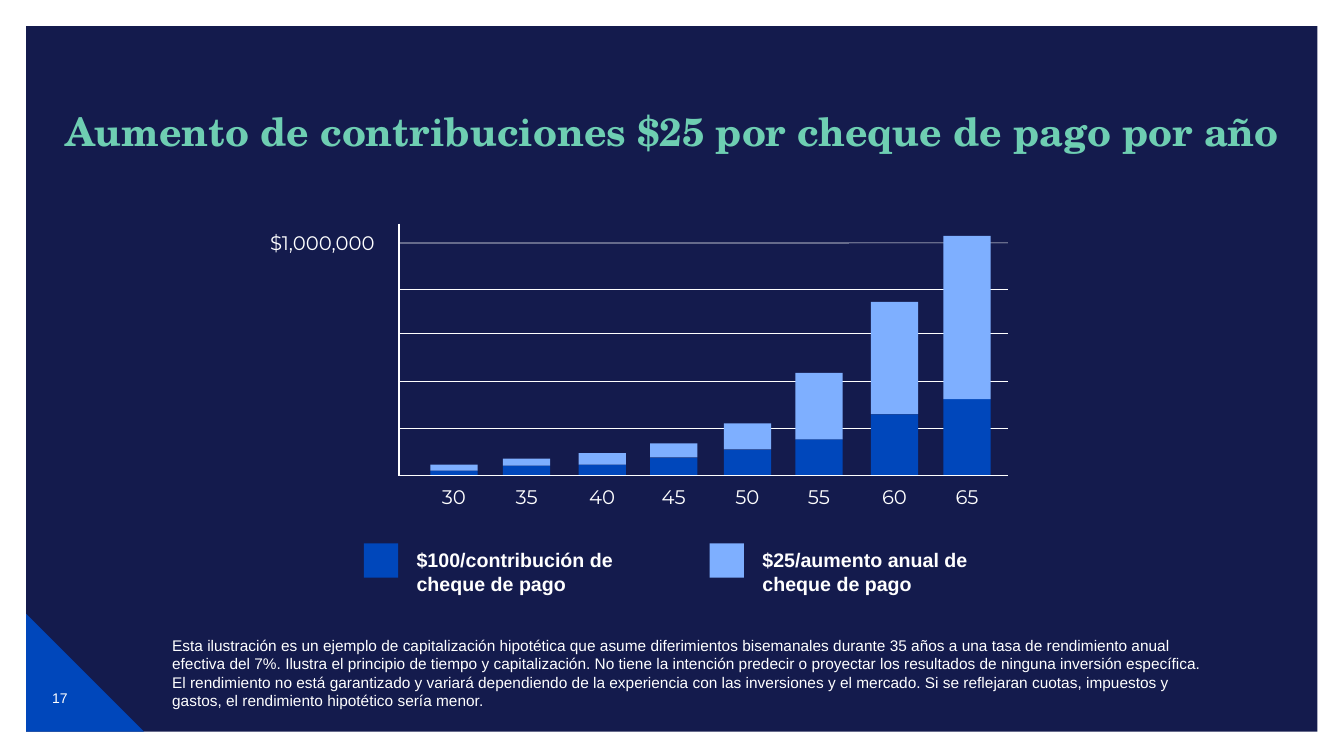
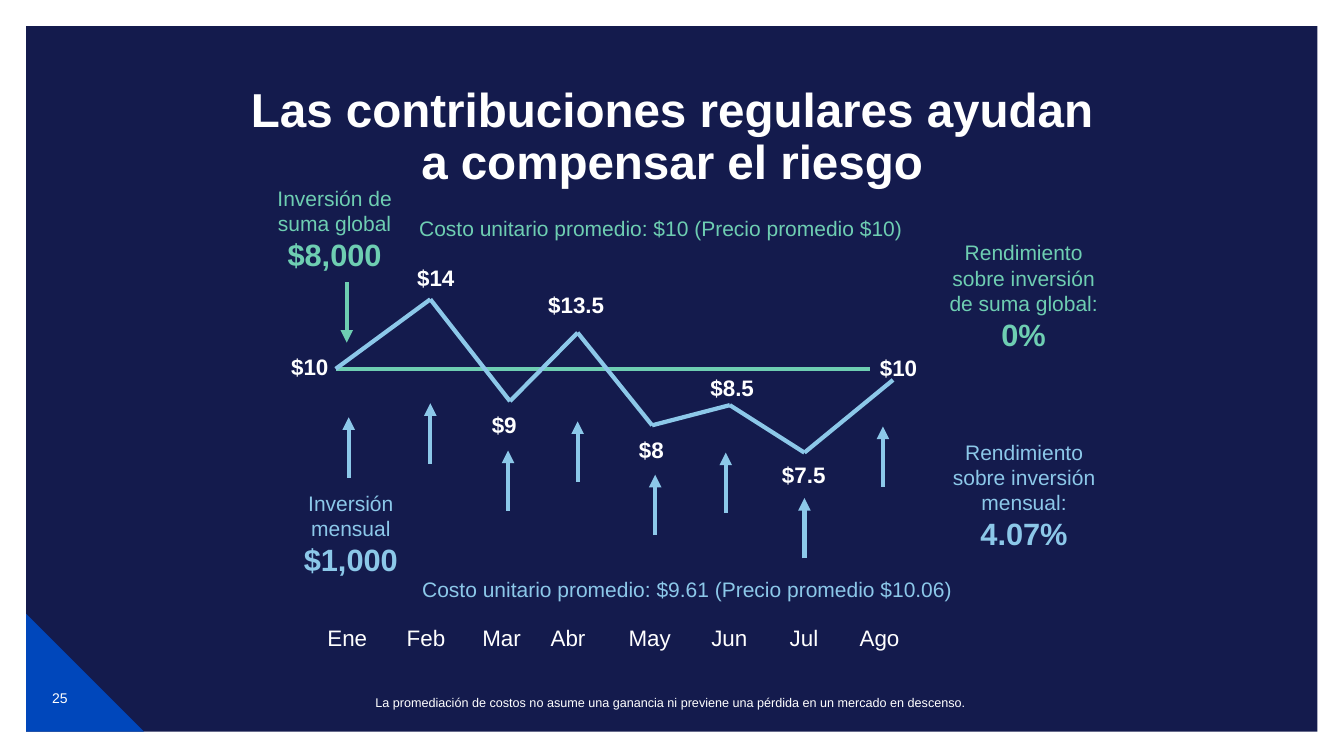
"""Build two slides on retirement saving: yearly raises and regular deposits."""
from dataclasses import dataclass
from itertools import pairwise

from lxml import etree
from pptx import Presentation, shapes as kinds, slide as deck, util as u
from pptx.dml import color
from pptx.enum import shapes, text
from pptx.oxml import ns

Rgb = color.RGBColor
Spot = tuple[float, float]
Area = tuple[float, float, float, float]
MID = text.PP_ALIGN.CENTER
LEFT = text.PP_ALIGN.LEFT


@dataclass(frozen=True)
class Theme:
    navy: Rgb = Rgb.from_string("141B4D")
    blue: Rgb = Rgb.from_string("0047BB")
    light: Rgb = Rgb.from_string("7EAFFF")
    sky: Rgb = Rgb.from_string("8CC8E9")
    mint: Rgb = Rgb.from_string("6ECEB2")
    white: Rgb = Rgb.from_string("FFFFFF")
    sans: str = "Arial"
    serif: str = "TeX Gyre Schola"
    round: str = "Montserrat"
    head: float = 34
    title: float = 28
    sum: float = 22
    label: float = 16
    body: float = 15
    key: float = 14
    small: float = 11
    page: float = 10
    note: float = 9


T = Theme()


@dataclass(frozen=True)
class Run:
    words: str
    size: float
    tint: Rgb = T.white
    bold: bool = False
    face: str = T.sans


@dataclass(frozen=True)
class Bar:
    age: str
    left: float
    base: float
    rise: float


@dataclass(frozen=True)
class Month:
    name: str
    left: float
    dot: Spot
    tip: Spot
    price: str
    tag: Spot


@dataclass(frozen=True)
class Fact:
    area: Area
    words: str
    sum: str
    tint: Rgb


BARS = (
    Bar("30", 307.4, 3.6, 4.3),
    Bar("35", 359.3, 7.2, 5),
    Bar("40", 413.3, 7.9, 8.3),
    Bar("45", 464.4, 13, 10.1),
    Bar("50", 517, 18.7, 18.7),
    Bar("55", 568.1, 25.9, 47.5),
    Bar("60", 622.1, 43.9, 80.3),
    Bar("65", 673.9, 54.7, 116.6),
)
MONTHS = (
    Month("Ene", 223.2, (239.8, 263.5), (249.1, 298.1), "$10", (200.9, 248.4)),
    Month("Feb", 279.4, (307.4, 213.8), (307.4, 288), "$14", (290.9, 185)),
    Month("Mar", 333.4, (364.3, 286.6), (362.9, 321.8), "$9", (344.2, 290.2)),
    Month("Abr", 380.9, (412.6, 237.6), (412.6, 301), "$13.5", (384.5, 204.5)),
    Month("May", 439.2, (465.8, 303.8), (468, 339.1), "$8", (449.3, 308.2)),
    Month("Jun", 496.1, (521.3, 289.4), (518.4, 323.3), "$8.5", (500.4, 263.5)),
    Month("Jul", 549.4, (574.6, 323.3), (574.6, 355.7), "$7.5", (551.5, 326.2)),
    Month("Ago", 603.4, (637.9, 271.4), (630.7, 304.6), "$10", (621.4, 249.1)),
)
FACTS = (
    Fact((177.1, 128.9, 123.8, 70.6), "Inversión de suma global ", "$8,000", T.mint),
    Fact((200.9, 347, 99.4, 72.7), "Inversión mensual ", "$1,000", T.sky),
    Fact((668.9, 167.8, 124.6, 88.6), "Rendimiento sobre inversión de suma global: ", "0%", T.mint),
    Fact((669.6, 310.3, 123.8, 88.6), "Rendimiento sobre inversión mensual: ", "4.07%", T.sky),
)
GRID = (206.6, 238.3, 272.2, 306)
WARN = (
    "Esta ilustración es un ejemplo de capitalización hipotética que asume diferimientos "
    "bisemanales durante 35 años a una tasa de rendimiento anual efectiva del 7%. Ilustra el "
    "principio de tiempo y capitalización. No tiene la intención predecir o proyectar los "
    "resultados de ninguna inversión específica. El rendimiento no está garantizado y variará "
    "dependiendo de la experiencia con las inversiones y el mercado. Si se reflejaran cuotas, "
    "impuestos y gastos, el rendimiento hipotético sería menor."
)


def put(item: object, form: dict) -> None:
    for key, value in form.items():
        setattr(item, key, value)


def block(page: deck.Slide, area: Area, tint: Rgb,
          kind: shapes.MSO_SHAPE = shapes.MSO_SHAPE.RECTANGLE) -> None:
    shape = page.shapes.add_shape(kind, *map(u.Pt, area))
    shape.shadow.inherit = False
    shape.fill.solid()
    shape.fill.fore_color.rgb = tint
    shape.line.fill.background()


def write(page: deck.Slide, area: Area, *runs: Run, align: text.PP_ALIGN = MID,
          pad: float = 7.2, pitch: float | None = None,
          hold: text.MSO_ANCHOR = text.MSO_ANCHOR.TOP) -> kinds.autoshape.Shape:
    box = page.shapes.add_textbox(*map(u.Pt, area))
    frame = box.text_frame
    put(frame, {"word_wrap": True, "vertical_anchor": hold,
                "margin_left": u.Pt(pad), "margin_right": u.Pt(pad)})
    para = frame.paragraphs[0]
    put(para, {"alignment": align, "line_spacing": pitch})
    for run in runs:
        for row, words in enumerate(run.words.split("\n")):
            if row:
                para.add_line_break()
            part = para.add_run()
            part.text = words
            put(part.font, {"size": u.Pt(run.size), "name": run.face, "bold": run.bold})
            part.font.color.rgb = run.tint
    return box


def title(page: deck.Slide, area: Area, run: Run) -> None:
    write(page, area, run, pad=0, pitch=0.9)


def rule(page: deck.Slide, start: Spot, end: Spot, tint: Rgb, width: float,
         arrow: bool = False) -> kinds.connector.Connector:
    line = page.shapes.add_connector(shapes.MSO_CONNECTOR.STRAIGHT, *map(u.Pt, start + end))
    line.line.color.rgb = tint
    line.line.width = u.Pt(width)
    props = line.element.spPr
    if arrow:
        etree.SubElement(props.find(ns.qn("a:ln")), ns.qn("a:tailEnd"), type="triangle")
    etree.SubElement(props, ns.qn("a:effectLst"))
    return line


def start(show: Presentation, number: str) -> deck.Slide:
    page = show.slides.add_slide(show.slide_layouts[6])
    block(page, (18.7, 18.7, 922.3, 504), T.navy)
    block(page, (18.7, 438.5, 84.2, 84.2), T.blue, shapes.MSO_SHAPE.RIGHT_TRIANGLE)
    write(page, (23, 477.4, 39.6, 41.8), Run(number, T.page), hold=text.MSO_ANCHOR.MIDDLE)
    return page


def growth(show: Presentation) -> None:
    page = start(show, "17")
    title(page, (0, 77, 960, 87.1),
          Run("Aumento de contribuciones $25 por cheque de pago por año",
              T.title, T.mint, True, T.serif))
    write(page, (115.9, 450.7, 758.2, 47.5), Run(WARN, T.small), align=LEFT)
    left, right, top, base, wide = 285.1, 720, 159.8, 339.8, 33.8
    rule(page, (left, top), (left, base), T.white, 1)
    for y in GRID:
        rule(page, (right, y), (left, y), T.white, 0.5)
    mark = write(page, (185.8, 161.3, 99.3, 24.5),
                 Run("$1,000,000", T.key, face=T.round), align=LEFT)
    rule(page, (right, 173.5), (left, 173.5), T.white, 0.5).end_connect(mark, 3)
    for bar in BARS:
        split = base - bar.base
        block(page, (bar.left, split, wide, bar.base), T.blue)
        block(page, (bar.left, split - bar.rise, wide, bar.rise), T.light)
        write(page, (bar.left - 3.6, 342.7, wide + 7.2, 24.5),
              Run(bar.age, T.key, face=T.round))
    rule(page, (right, base), (left, base), T.white, 1)
    for x, tint, words in (
        (259.9, T.blue, "$100/contribución de\ncheque de pago"),
        (506.9, T.light, "$25/aumento anual de\ncheque de pago"),
    ):
        block(page, (x, 388.1, 24.5, 24.5), tint)
        write(page, (x + 30.6, 388.1, 235.4, 41), Run(words, T.key, bold=True), align=LEFT)


def risk(show: Presentation) -> None:
    page = start(show, "25")
    title(page, (69.1, 58.3, 822.2, 46.8),
          Run("Las contribuciones regulares ayudan\na compensar el riesgo", T.head, bold=True))
    first = MONTHS[0].dot
    rule(page, first, (621.4, first[1]), T.mint, 3)
    for one, two in pairwise(MONTHS):
        rule(page, one.dot, two.dot, T.sky, 3)
    rule(page, (247.7, 201.6), (247.7, 244.8), T.mint, 3, True)
    for month in MONTHS:
        x, y = month.tip
        rule(page, (x, y + 43.2), month.tip, T.sky, 3, True)
        write(page, (month.left, 442.1, 49.7, 26.6), Run(month.name, T.label))
        write(page, (*month.tag, 57.6, 26.6), Run(month.price, T.label, bold=True), align=LEFT)
    for fact in FACTS:
        write(page, fact.area, Run(fact.words, T.body, fact.tint),
              Run(fact.sum, T.sum, fact.tint, True))
    write(page, (294.5, 408.2, 427.7, 25.2),
          Run("Costo unitario promedio: $9.61 (Precio promedio $10.06)", T.body, T.sky),
          align=LEFT)
    write(page, (290.9, 152.6, 362.2, 24.5),
          Run("Costo unitario promedio: $10 (Precio promedio $10)", T.body, T.mint),
          pad=0, pitch=0.9)
    write(page, (197.3, 492.5, 563, 18),
          Run("La promediación de costos no asume una ganancia ni previene una pérdida "
              "en un mercado en descenso.", T.note))


def main() -> None:
    show = Presentation()
    put(show, {"slide_width": u.Pt(960), "slide_height": u.Pt(540)})
    growth(show)
    risk(show)
    show.save("out.pptx")


if __name__ == "__main__":
    main()
